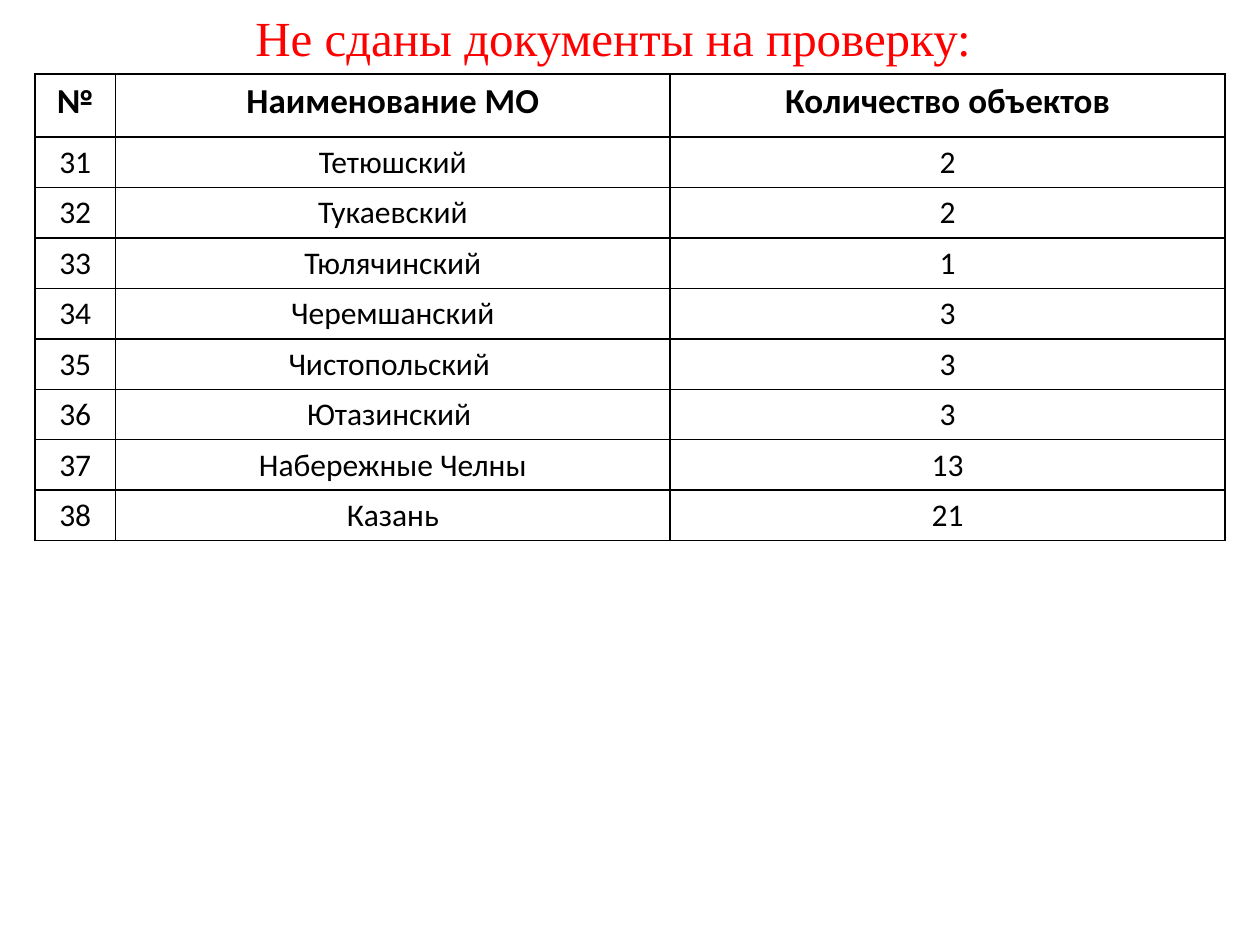
from lxml import etree
from pptx import Presentation
from pptx.dml.color import RGBColor
from pptx.enum.text import MSO_ANCHOR, PP_ALIGN
from pptx.oxml.ns import qn
from pptx.util import Pt

CENTER = PP_ALIGN.CENTER
MIDDLE = MSO_ANCHOR.MIDDLE

BLACK = "000000"
RED = "FF0000"
COLUMN_WIDTHS = (46, 317, 317)
HEADER_HEIGHT = 36
ROW_HEIGHT = 28.8
FIRST_NUMBER = 31
HEADER = ("№", "Наименование МО", "Количество объектов")
DISTRICTS = (
    ("Тетюшский", 2),
    ("Тукаевский", 2),
    ("Тюлячинский", 1),
    ("Черемшанский", 3),
    ("Чистопольский ", 3),
    ("Ютазинский ", 3),
    ("Набережные Челны", 13),
    ("Казань", 21),
)


def color(value):
    return RGBColor.from_string(value)


def write_text(frame, text, font_name, size, font_color, bold=False):
    """Put one centred, formatted paragraph into a text frame."""
    frame.text = text
    para = frame.paragraphs[0]
    para.alignment = CENTER
    font = para.runs[0].font
    font.name = font_name
    font.size = Pt(size)
    font.bold = bold
    font.color.rgb = color(font_color)


def add_title(page, text):
    box = page.shapes.add_textbox(Pt(4.3), Pt(0.7), Pt(692), Pt(41))
    frame = box.text_frame
    frame.word_wrap = True
    frame.vertical_anchor = MIDDLE
    write_text(frame, text, "Times New Roman", 28, RED)


def add_borders(cell, line_color, width):
    properties = cell._tc.get_or_add_tcPr()
    for position, side in enumerate(("a:lnL", "a:lnR", "a:lnT", "a:lnB")):
        line = etree.Element(qn(side), w=str(Pt(width)))
        fill = etree.SubElement(line, qn("a:solidFill"))
        etree.SubElement(fill, qn("a:srgbClr"), val=line_color)
        properties.insert(position, line)


def add_district_table(page):
    rows = [HEADER]
    for number, (district, count) in enumerate(DISTRICTS, FIRST_NUMBER):
        rows.append((str(number), district, str(count)))
    height = HEADER_HEIGHT + ROW_HEIGHT * len(DISTRICTS)
    table = page.shapes.add_table(
        len(rows), len(HEADER), Pt(20), Pt(42.3), Pt(sum(COLUMN_WIDTHS)), Pt(height)
    ).table
    table.horz_banding = False
    for column, width in zip(table.columns, COLUMN_WIDTHS):
        column.width = Pt(width)
    for row_index, values in enumerate(rows):
        is_header = row_index == 0
        table.rows[row_index].height = Pt(HEADER_HEIGHT if is_header else ROW_HEIGHT)
        for column_index, value in enumerate(values):
            cell = table.cell(row_index, column_index)
            cell.fill.background()
            add_borders(cell, BLACK, 1)
            size = 20 if is_header else 18
            write_text(cell.text_frame, value, "Calibri", size, BLACK, is_header)


def main():
    deck = Presentation()
    deck.slide_width = Pt(720)
    deck.slide_height = Pt(540)
    page = deck.slides.add_slide(deck.slide_layouts[6])
    add_title(page, "Не сданы документы на проверку:")
    add_district_table(page)
    deck.save("out.pptx")


if __name__ == "__main__":
    main()
